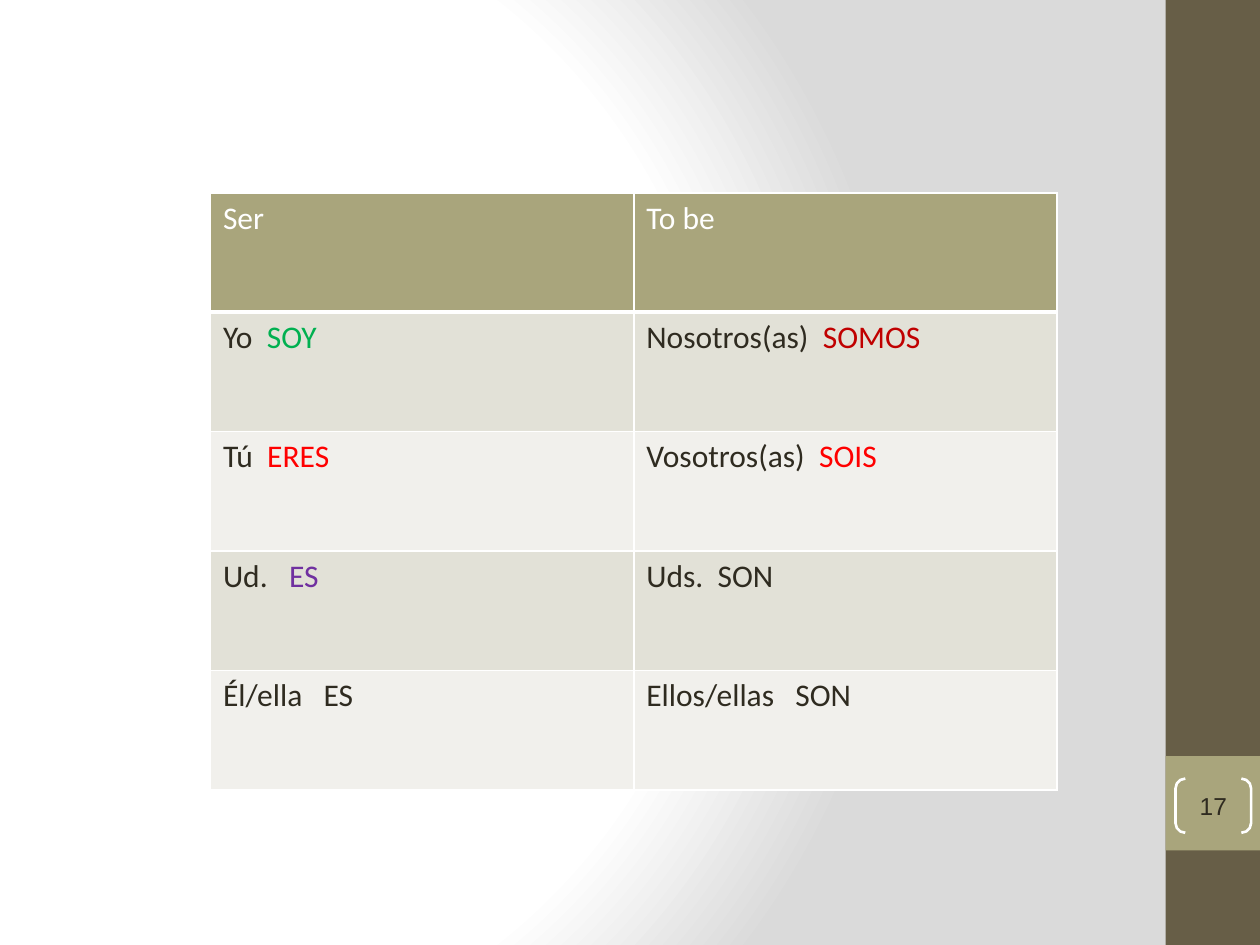
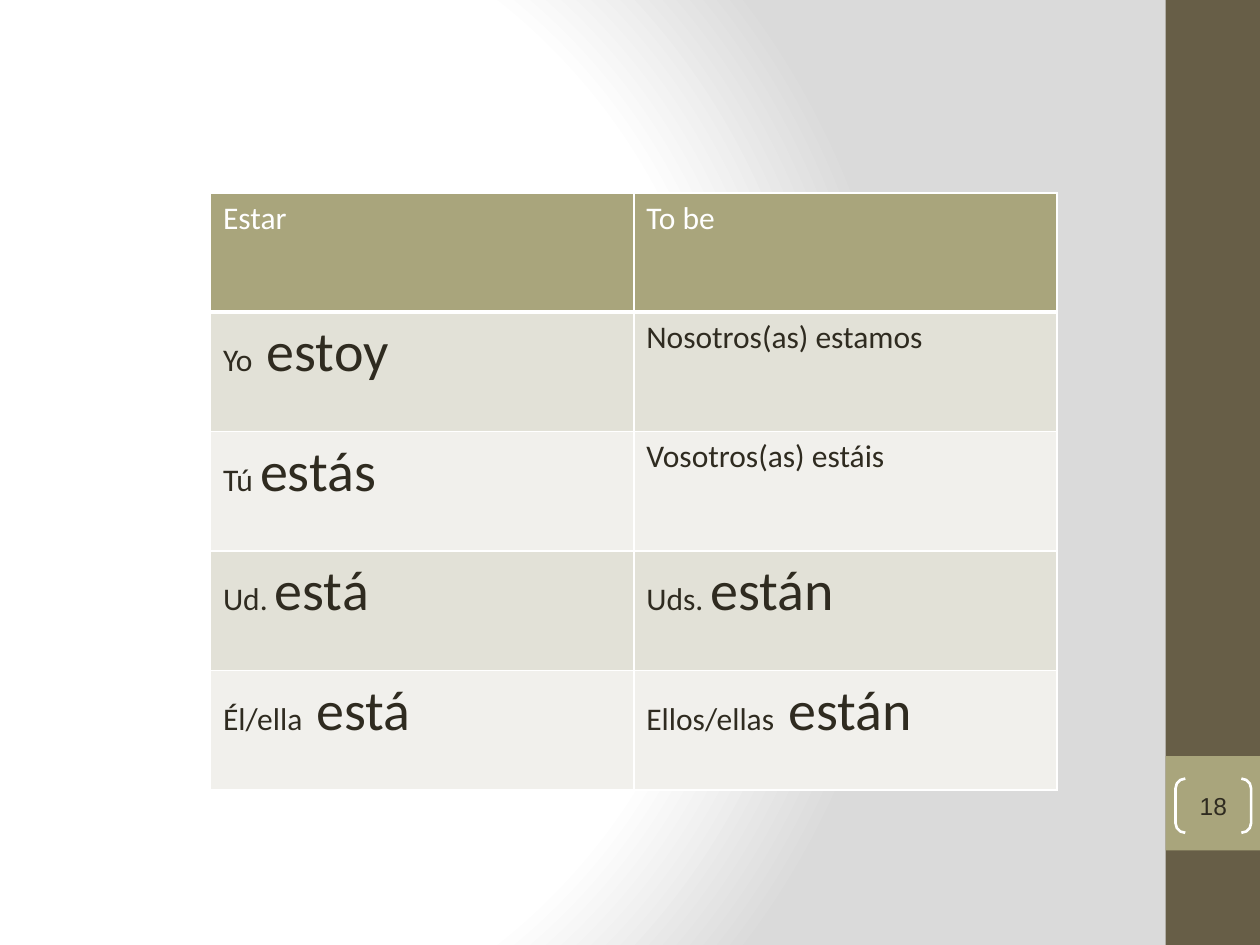
from lxml import etree
from pptx import Presentation, oxml
from pptx import util as u
from pptx.dml.color import RGBColor
from pptx.enum import shapes, text
from pptx.oxml.ns import nsdecls, qn

PX = 9144
WHITE = RGBColor(0xFF, 0xFF, 0xFF)
GREY = RGBColor(0xDA, 0xDA, 0xDA)
INK = RGBColor(0x2F, 0x2B, 0x20)
BROWN = RGBColor(0x67, 0x5E, 0x47)
OLIVE = RGBColor(0xA9, 0xA5, 0x7C)
BANDS = (RGBColor(0xE2, 0xE1, 0xD7), RGBColor(0xF1, 0xF0, 0xEC))
GREEN = RGBColor(0x00, 0xB0, 0x50)
CRIMSON = RGBColor(0xC0, 0x00, 0x00)
RED = RGBColor(0xFF, 0x00, 0x00)
PURPLE = RGBColor(0x70, 0x30, 0xA0)
BODY, BIG = 18, 32

BACK = f"""<p:bg {nsdecls('p', 'a')}><p:bgPr><a:gradFill rotWithShape="1"><a:gsLst>
<a:gs pos="0"><a:srgbClr val="{WHITE}"/></a:gs>
<a:gs pos="75000"><a:srgbClr val="{WHITE}"/></a:gs>
<a:gs pos="100000"><a:srgbClr val="{GREY}"/></a:gs></a:gsLst>
<a:path path="circle"><a:fillToRect l="20000" t="50000" r="100000" b="50000"/></a:path>
</a:gradFill><a:effectLst/></p:bgPr></p:bg>"""

SER = [
    ["Ser", "To be"],
    [("Yo  ", ("SOY", GREEN)), ("Nosotros(as)  ", ("SOMOS", CRIMSON))],
    [("Tú  ", ("ERES", RED)), ("Vosotros(as)  ", ("SOIS", RED))],
    [("Ud.   ", ("ES", PURPLE)), "Uds.  SON"],
    ["Él/ella   ES", "Ellos/ellas   SON"],
]
ESTAR = [
    ["Estar", "To be"],
    [("Yo  ", ("estoy", INK, BIG)), "Nosotros(as) estamos"],
    [("Tú ", ("estás", INK, BIG)), "Vosotros(as) estáis"],
    [("Ud. ", ("está", INK, BIG)), ("Uds. ", ("están", INK, BIG))],
    [("Él/ella  ", ("está", INK, BIG)), ("Ellos/ellas  ", ("están", INK, BIG))],
]


class Deck:
    def __init__(self):
        self.prs = Presentation()
        self.prs.slide_width, self.prs.slide_height = 1000 * PX, 750 * PX
        self.slide = None

    def page(self, num):
        self.slide = self.prs.slides.add_slide(self.prs.slide_layouts[6])
        self.slide.element.cSld.insert(0, oxml.parse_xml(BACK))
        self.shape(shapes.MSO_SHAPE.RECTANGLE, 925, 0, 75, 750, BROWN)
        self.shape(shapes.MSO_SHAPE.RECTANGLE, 925, 600, 75, 75, OLIVE)
        self.badge(num)

    def shape(self, kind, x, y, w, h, fill=None):
        item = self.slide.shapes.add_shape(kind, x * PX, y * PX, w * PX, h * PX)
        item.shadow.inherit = False
        if fill is None:
            item.fill.background()
        else:
            item.fill.solid()
            item.fill.fore_color.rgb = fill
        item.line.fill.background()
        return item

    def badge(self, num):
        item = self.shape(shapes.MSO_SHAPE.DOUBLE_BRACKET, 933, 618, 60, 43)
        item.adjustments[0] = 0.18
        item.line.color.rgb = WHITE
        item.line.width = u.Pt(1.5)
        frame = item.text_frame
        frame.margin_left = frame.margin_right = 0
        frame.margin_top = frame.margin_bottom = 0
        frame.vertical_anchor = text.MSO_ANCHOR.MIDDLE
        para = frame.paragraphs[0]
        para.alignment = text.PP_ALIGN.CENTER
        self.run(para, str(num), INK, 14, "Arial")

    def run(self, para, words, color=INK, size=BODY, face="Calibri"):
        run = para.add_run()
        run.text = words
        font = run.font
        font.name, font.size, font.bold = face, u.Pt(size), False
        font.color.rgb = color

    def edges(self, cell, base):
        props = cell._tc.get_or_add_tcPr()
        sides = (("L", 1), ("R", 1), ("T", 1), ("B", base))
        for spot, (side, wide) in enumerate(sides):
            line = etree.Element(qn(f"a:ln{side}"), w=str(u.Pt(wide)))
            fill = etree.SubElement(line, qn("a:solidFill"))
            etree.SubElement(fill, qn("a:srgbClr"), val=str(WHITE))
            props.insert(spot, line)

    def table(self, rows):
        frame = self.slide.shapes.add_table(
            len(rows), 2, 167 * PX, 153 * PX, 672 * PX, 474 * PX)
        grid = frame.table
        grid.first_row = grid.horz_banding = False
        for r, row in enumerate(rows):
            head = r == 0
            for c, parts in enumerate(row):
                cell = grid.cell(r, c)
                cell.fill.solid()
                cell.fill.fore_color.rgb = OLIVE if head else BANDS[(r - 1) % 2]
                self.edges(cell, 3 if head else 1)
                para = cell.text_frame.paragraphs[0]
                for part in [parts] if isinstance(parts, str) else parts:
                    if isinstance(part, str):
                        part = (part, WHITE if head else INK)
                    self.run(para, *part)


def main():
    deck = Deck()
    for num, rows in enumerate((SER, ESTAR), 17):
        deck.page(num)
        deck.table(rows)
    deck.prs.save("out.pptx")


if __name__ == "__main__":
    main()
